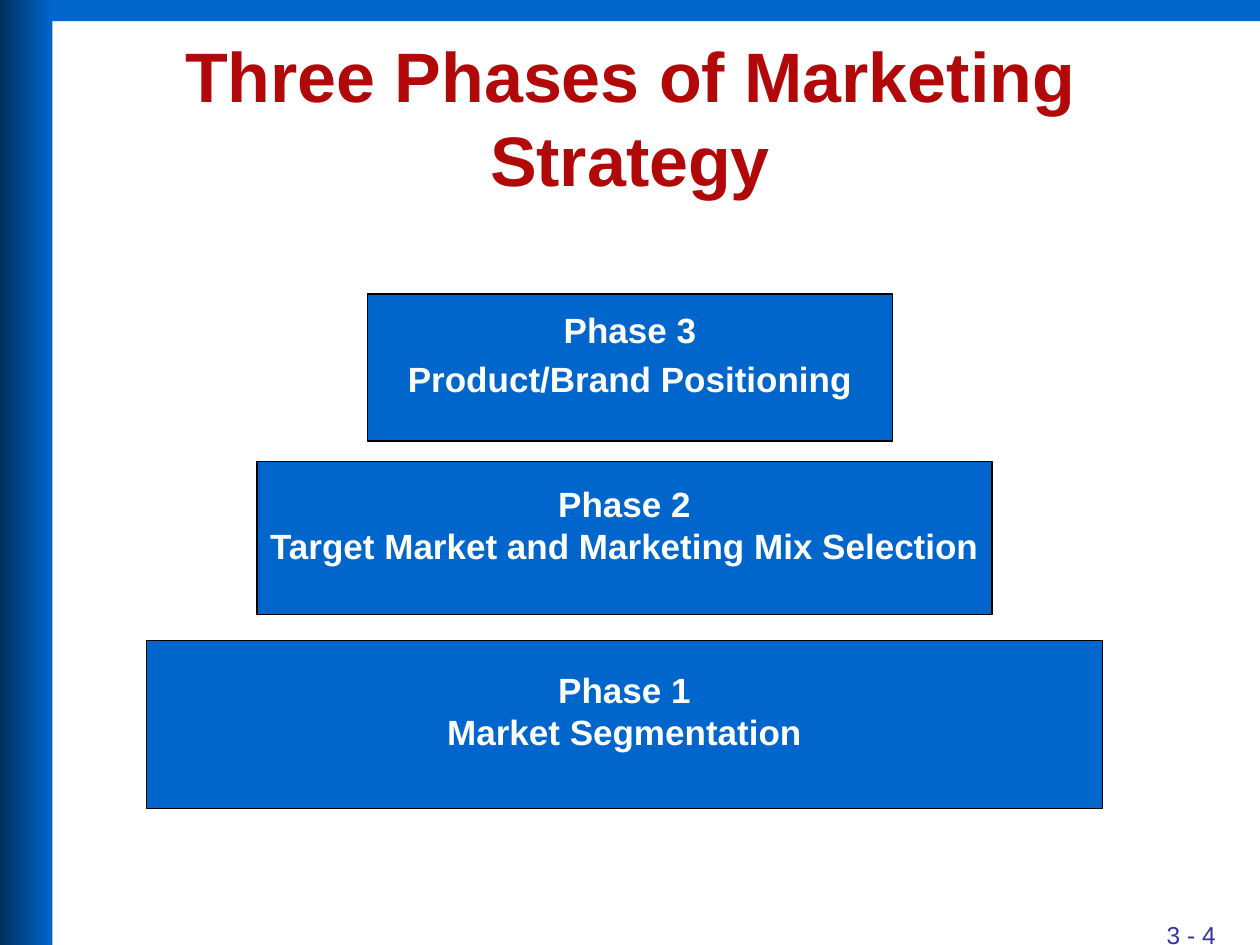
from dataclasses import dataclass

from pptx import Presentation
from pptx.dml.color import RGBColor
from pptx.enum.shapes import MSO_SHAPE
from pptx.enum.text import MSO_ANCHOR, MSO_AUTO_SIZE, PP_ALIGN
from pptx.util import Cm, Pt

RECT = MSO_SHAPE.RECTANGLE
MIDDLE, TOP = MSO_ANCHOR.MIDDLE, MSO_ANCHOR.TOP
CENTER, RIGHT = PP_ALIGN.CENTER, PP_ALIGN.RIGHT
NO_FIT = MSO_AUTO_SIZE.NONE

BLUE = RGBColor(0x00, 0x66, 0xCC)
NAVY = RGBColor(0x00, 0x2F, 0x5E)
RED = RGBColor(0xB1, 0x09, 0x09)
INDIGO = RGBColor(0x33, 0x33, 0x99)
WHITE = RGBColor(0xFF, 0xFF, 0xFF)
BLACK = RGBColor(0x00, 0x00, 0x00)

TITLE_FONT = {"name": "Arial", "size": Pt(40), "bold": True}
PHASE_FONT = {"name": "Arial", "size": Pt(20), "bold": True}
NUMBER_FONT = {"name": "Arial", "size": Pt(14), "bold": False}
PHASE_FRAME = {
    "word_wrap": False,
    "vertical_anchor": MIDDLE,
    "margin_left": Cm(0.25),
    "margin_right": Cm(0.25),
    "margin_top": Cm(0.38),
    "margin_bottom": Cm(0.94),
}


@dataclass
class Box:
    left: float
    top: float
    width: float
    height: float

    def lengths(self):
        return [Cm(v) for v in (self.left, self.top, self.width, self.height)]


@dataclass
class Phase:
    number: int
    name: str
    box: Box
    gap: float = 0


PHASES = [
    Phase(3, "Product/Brand Positioning", Box(7.41, 5.93, 10.58, 2.96), 4),
    Phase(2, "Target Market and Marketing Mix Selection", Box(5.18, 9.31, 14.82, 3.08)),
    Phase(1, "Market Segmentation", Box(2.96, 12.91, 19.26, 3.39)),
]


def apply(target, values: dict) -> None:
    for key, value in values.items():
        setattr(target, key, value)


def write(p, text: str, font: dict, color: RGBColor, align) -> None:
    p.alignment = align
    r = p.add_run()
    r.text = text
    apply(r.font, font)
    r.font.color.rgb = color


def add_rect(s, box: Box):
    sp = s.shapes.add_shape(RECT, *box.lengths())
    sp.shadow.inherit = False
    sp.fill.solid()
    sp.fill.fore_color.rgb = BLUE
    sp.line.fill.background()
    return sp


def add_side_bar(s, box: Box) -> None:
    sp = add_rect(s, box)
    sp.fill.gradient()
    sp.fill.gradient_angle = 0
    for stop, color in zip(sp.fill.gradient_stops, (NAVY, BLUE)):
        stop.color.rgb = color


def add_phase(s, phase: Phase) -> None:
    sp = add_rect(s, phase.box)
    sp.line.color.rgb = BLACK
    sp.line.width = Pt(0.75)
    tf = sp.text_frame
    apply(tf, PHASE_FRAME)
    write(tf.paragraphs[0], f"Phase {phase.number}", PHASE_FONT, WHITE, CENTER)
    p = tf.add_paragraph()
    p.space_before = Pt(phase.gap)
    write(p, phase.name, PHASE_FONT, WHITE, CENTER)


def set_title(s, text: str, box: Box) -> None:
    sp = s.shapes.title
    sp.left, sp.top, sp.width, sp.height = box.lengths()
    tf = sp.text_frame
    apply(tf, {"word_wrap": True, "auto_size": NO_FIT, "vertical_anchor": MIDDLE})
    write(tf.paragraphs[0], text, TITLE_FONT, RED, CENTER)


def add_number(s, text: str, box: Box) -> None:
    tf = s.shapes.add_textbox(*box.lengths()).text_frame
    apply(tf, {"word_wrap": True, "vertical_anchor": TOP})
    write(tf.paragraphs[0], text, NUMBER_FONT, INDIGO, RIGHT)


def main() -> None:
    prs = Presentation()
    prs.slide_width, prs.slide_height = Cm(25.4), Cm(19.05)
    s = prs.slides.add_slide(prs.slide_layouts[5])
    add_rect(s, Box(0, 0, 25.4, 0.43))
    add_side_bar(s, Box(0, 0, 1.06, 19.05))
    add_number(s, "3 - 4", Box(19.48, 18.42, 5.28, 1.27))
    set_title(s, "Three Phases of Marketing Strategy", Box(1.27, 0.76, 22.86, 3.18))
    for phase in PHASES:
        add_phase(s, phase)
    prs.save("out.pptx")


if __name__ == "__main__":
    main()
